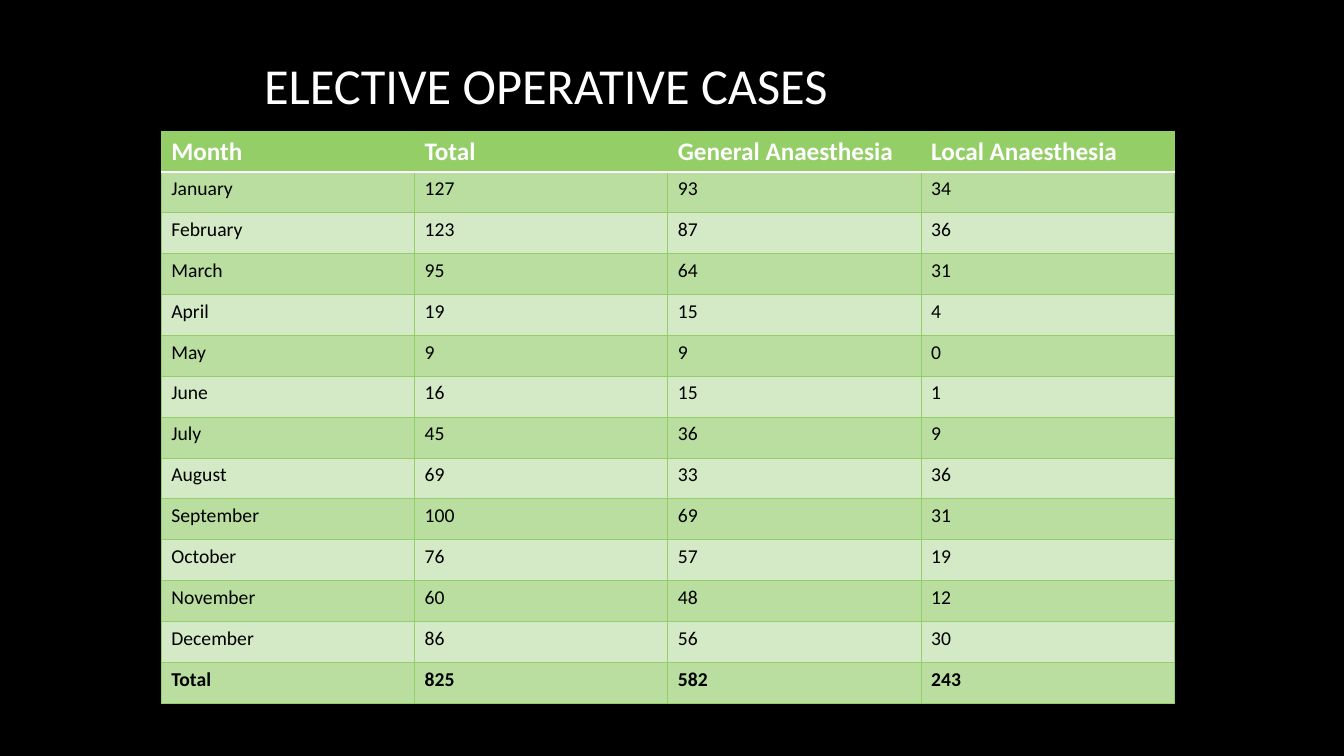
from dataclasses import dataclass

from lxml.etree import SubElement
from pptx import Presentation
from pptx.dml.color import RGBColor as Rgb
from pptx.enum.text import MSO_ANCHOR as Anchor, PP_ALIGN as Align
from pptx.oxml.ns import qn
from pptx.util import Inches, Pt


@dataclass(frozen=True)
class Theme:
    font: str = "Calibri"
    back: str = "000000"
    light: str = "FFFFFF"
    dark: str = "000000"
    green: str = "94CE67"
    bands: tuple = ("BADE9F", "D4E9C5")
    title: int = 36
    head: int = 18
    body: int = 14
    thin: float = 0.75
    thick: float = 1.5


class Deck:
    def __init__(self, theme):
        self.theme = theme
        self.show = Presentation()
        self.show.slide_width = Inches(13.33)
        self.show.slide_height = Inches(7.5)
        self.slide = self.show.slides.add_slide(self.show.slide_layouts[5])
        fill = self.slide.background.fill
        fill.solid()
        fill.fore_color.rgb = Rgb.from_string(theme.back)

    def box(self, left, top, width, height):
        """Turn percentages of the slide into lengths."""
        wide, high = self.show.slide_width, self.show.slide_height
        sides = ((left, wide), (top, high), (width, wide), (height, high))
        return [round(share * full / 100) for share, full in sides]

    def style(self, para, size, color, bold=False):
        para.alignment = Align.LEFT
        font = para.font
        font.name, font.size, font.bold = self.theme.font, Pt(size), bold
        font.color.rgb = Rgb.from_string(color)

    def title(self, text, *place):
        shape = self.slide.shapes.title
        shape.left, shape.top, shape.width, shape.height = self.box(*place)
        frame = shape.text_frame
        frame.text = text
        frame.vertical_anchor = Anchor.MIDDLE
        self.style(frame.paragraphs[0], self.theme.title, self.theme.light)

    def edge(self, cell, side, color, width):
        line = SubElement(cell._tc.get_or_add_tcPr(), qn(f"a:ln{side}"),
                          w=str(Pt(width)))
        fill = SubElement(line, qn("a:solidFill"))
        SubElement(fill, qn("a:srgbClr"), val=color)

    def cell(self, cell, text, row, last):
        look = self.theme
        cell.text = str(text)
        # The rule under the header is shared by the first two rows.
        rule = {0: "B", 1: "T"}.get(row)
        for side in "LRTB":
            if side == rule:
                self.edge(cell, side, look.light, look.thick)
            else:
                self.edge(cell, side, look.green, look.thin)
        cell.fill.solid()
        band = look.bands[(row - 1) % 2] if row else look.green
        cell.fill.fore_color.rgb = Rgb.from_string(band)
        size, color = (look.body, look.dark) if row else (look.head, look.light)
        self.style(cell.text_frame.paragraphs[0], size, color, row in (0, last))

    def table(self, rows, *place):
        left, top, width, height = self.box(*place)
        count = len(rows)
        grid = self.slide.shapes.add_table(
            count, len(rows[0]), left, top, width, height).table
        for r, row in enumerate(rows):
            for c, text in enumerate(row):
                self.cell(grid.cell(r, c), text, r, count - 1)


HEAD = ("Month", "Total", "General Anaesthesia", "Local Anaesthesia")
CASES = (
    ("January", 93, 34),
    ("February", 87, 36),
    ("March", 64, 31),
    ("April", 15, 4),
    ("May", 9, 0),
    ("June", 15, 1),
    ("July", 36, 9),
    ("August", 33, 36),
    ("September", 69, 31),
    ("October", 57, 19),
    ("November", 48, 12),
    ("December", 56, 30),
)


def main():
    sums = ("Total", sum(c[1] for c in CASES), sum(c[2] for c in CASES))
    rows = [HEAD] + [(name, general + local, general, local)
                     for name, general, local in CASES + (sums,)]
    deck = Deck(Theme())
    deck.title("ELECTIVE OPERATIVE CASES", 18.9, 3.47, 68.87, 15.33)
    deck.table(rows, 12, 17.33, 75.39, 75.73)
    deck.show.save("out.pptx")


if __name__ == "__main__":
    main()
